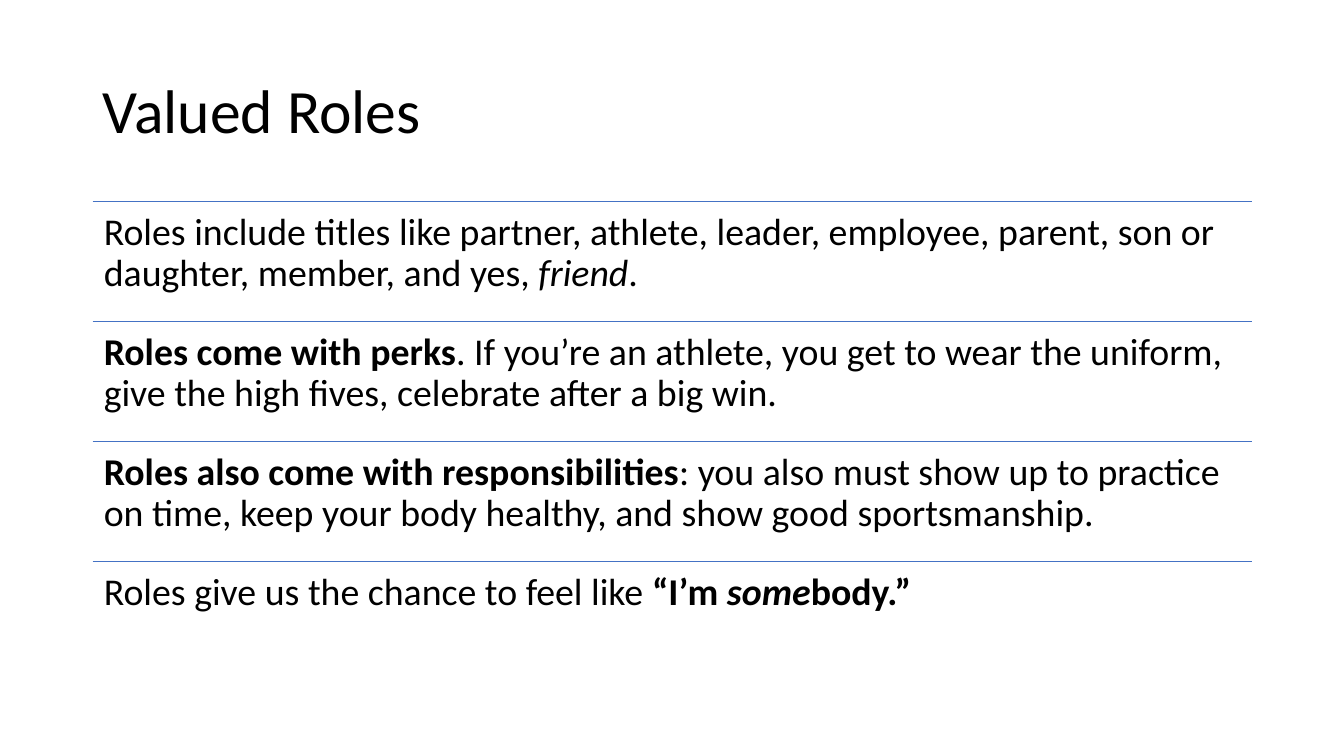
from pptx import Presentation
from pptx.dml.color import RGBColor
from pptx.enum.shapes import MSO_CONNECTOR
from pptx.enum.text import MSO_ANCHOR
from pptx.oxml.ns import qn
from pptx.util import Inches, Pt
from lxml import etree

STRAIGHT = MSO_CONNECTOR.STRAIGHT
TOP, MIDDLE = MSO_ANCHOR.TOP, MSO_ANCHOR.MIDDLE
BLACK, BLUE = "000000", "4472C4"

ROLES = [
    [("Roles include titles like partner, athlete, leader, employee, parent, "
      "son or daughter, member, and yes, ", ""), ("friend", "i"), (".", "")],
    [("Roles come with perks", "b"),
     (". If you’re an athlete, you get to wear the uniform, "
      "give the high fives, celebrate after a big win.", "")],
    [("Roles also come with responsibilities", "b"),
     (": you also must show up to practice on time, keep your body healthy, "
      "and show good sportsmanship.", "")],
    [("Roles give us the chance to feel like ", ""), ("“I’m ", "b"),
     ("some", "bi"), ("body.”", "b")],
]


def color(code):
    """Turn a hex string into a colour."""
    return RGBColor.from_string(code)


def add_text(slide, box, runs, size, anchor, pad):
    """Place one paragraph of styled runs in a box, with pad as (side, top) insets."""
    frame = slide.shapes.add_textbox(*map(Inches, box)).text_frame
    frame.word_wrap = True
    frame.vertical_anchor = anchor
    frame.margin_left = frame.margin_right = Inches(pad[0])
    frame.margin_top = frame.margin_bottom = Inches(pad[1])
    para = frame.paragraphs[0]
    para.line_spacing = 0.9
    para.font.name = "Calibri"
    para.font.size = Pt(size)
    para.font.color.rgb = color(BLACK)
    for text, style in runs:
        run = para.add_run()
        run.text = text
        if "b" in style:
            run.font.bold = True
        if "i" in style:
            run.font.italic = True


def add_rule(slide, left, top, width):
    """Draw a thin horizontal rule."""
    rule = slide.shapes.add_connector(
        STRAIGHT, Inches(left), Inches(top), Inches(left + width), Inches(top))
    rule.line.color.rgb = color(BLUE)
    rule.line.width = Pt(1)
    etree.SubElement(rule._element.spPr, qn("a:effectLst"))


def add_title(slide, box):
    """Place the slide title."""
    add_text(slide, box, [("Valued Roles", "")], 44, MIDDLE, (0.1, 0.05))


def add_roles(slide, box):
    """Stack the role statements in equal rows, each under a rule."""
    left, top, width, height = box
    step = height / len(ROLES)
    for row, runs in enumerate(ROLES):
        y = top + row * step
        add_rule(slide, left, y, width)
        add_text(slide, (left, y, width, step), runs, 27, TOP, (0.11, 0.11))


def main():
    """Build and save the slide."""
    deck = Presentation()
    deck.slide_width, deck.slide_height = Inches(13.33), Inches(7.5)
    slide = deck.slides.add_slide(deck.slide_layouts[6])
    add_title(slide, (0.92, 0.4, 11.5, 1.45))
    add_roles(slide, (0.92, 2, 11.5, 4.76))
    deck.save("out.pptx")


if __name__ == "__main__":
    main()
